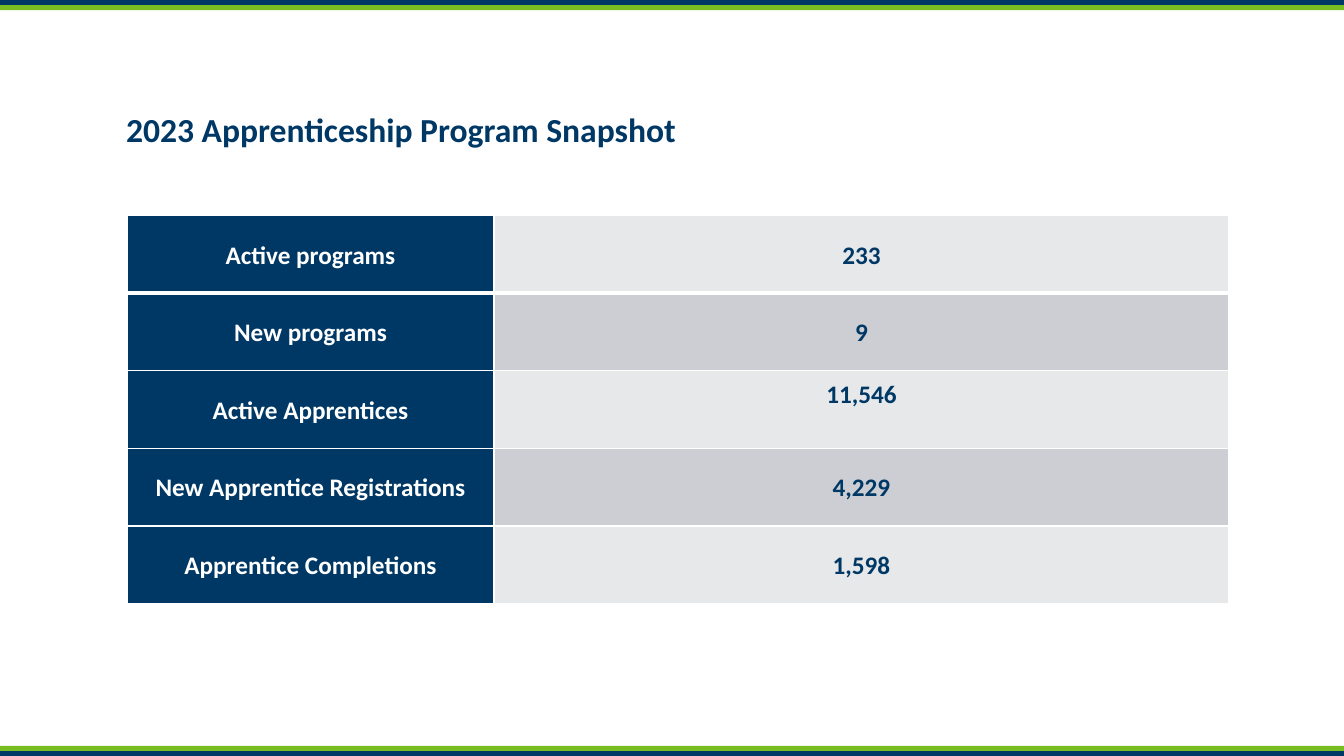
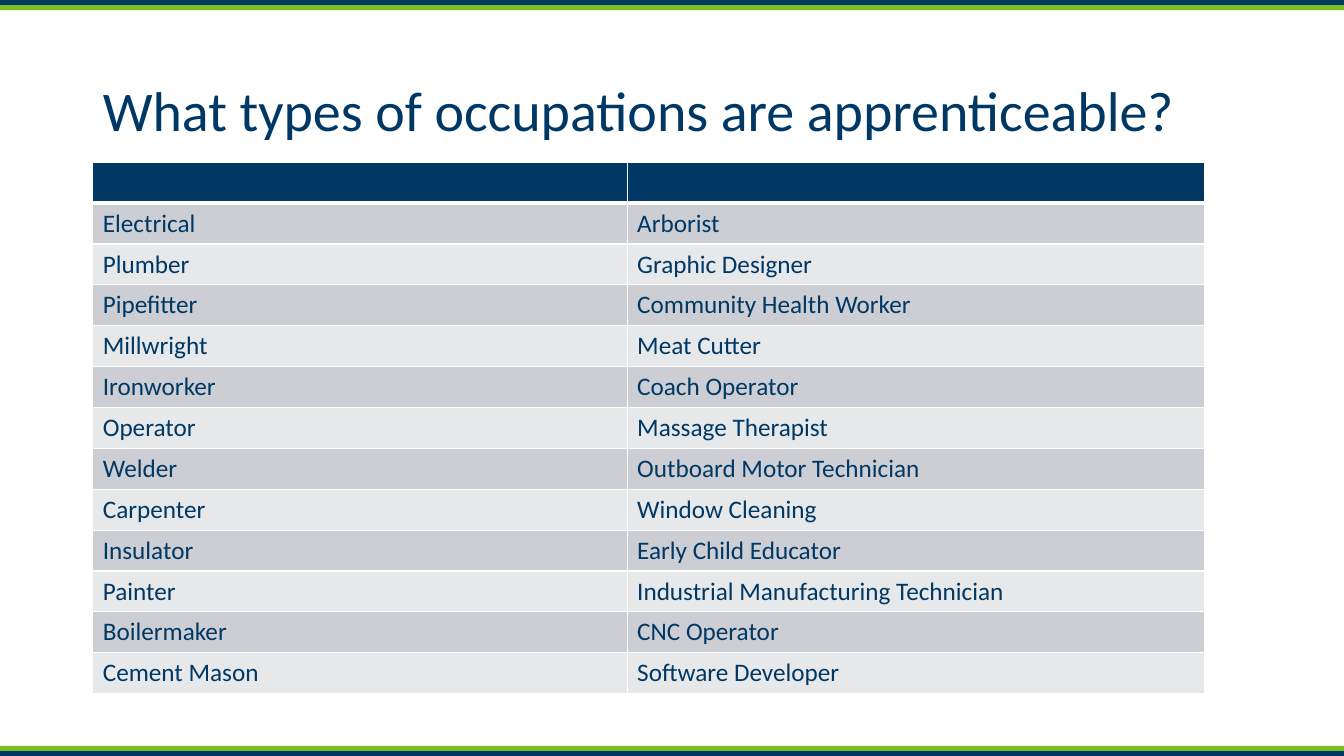
"""Build two apprenticeship slides: a program snapshot and a list of occupations."""
from lxml import etree
from pptx import Presentation
from pptx.dml.color import RGBColor
from pptx.enum.shapes import MSO_SHAPE
from pptx.enum.text import MSO_ANCHOR, MSO_AUTO_SIZE, PP_ALIGN
from pptx.oxml.ns import qn
from pptx.util import Inches, Pt

RECTANGLE = MSO_SHAPE.RECTANGLE
TOP, MIDDLE = MSO_ANCHOR.TOP, MSO_ANCHOR.MIDDLE
LEFT, CENTER = PP_ALIGN.LEFT, PP_ALIGN.CENTER
NO_AUTOFIT = MSO_AUTO_SIZE.NONE

NAVY = RGBColor(0x00, 0x38, 0x65)
GREEN = RGBColor(0x78, 0xBE, 0x21)
WHITE = RGBColor(0xFF, 0xFF, 0xFF)
LIGHT_GRAY = RGBColor(0xE7, 0xE8, 0xEA)
DARK_GRAY = RGBColor(0xCC, 0xCE, 0xD3)

FONT = "Calibri"
SLIDE_WIDTH, SLIDE_HEIGHT = 13.33, 7.5
BAND_HEIGHT = 0.05
TITLE_ONLY = 5

SNAPSHOT_TITLE = "2023 Apprenticeship Program Snapshot"
SNAPSHOT = [
    ("Active programs", "233"),
    ("New programs", "9"),
    ("Active Apprentices", "11,546"),
    ("New Apprentice Registrations", "4,229"),
    ("Apprentice Completions", "1,598"),
]
RAISED_VALUE = (2, 1)

OCCUPATIONS_TITLE = "What types of occupations are apprenticeable?"
OCCUPATIONS = [
    ("", ""),
    ("Electrical", "Arborist"),
    ("Plumber", "Graphic Designer"),
    ("Pipefitter", "Community Health Worker"),
    ("Millwright", "Meat Cutter"),
    ("Ironworker", "Coach Operator"),
    ("Operator", "Massage Therapist"),
    ("Welder", "Outboard Motor Technician"),
    ("Carpenter", "Window Cleaning"),
    ("Insulator", "Early Child Educator"),
    ("Painter", "Industrial Manufacturing Technician"),
    ("Boilermaker", "CNC Operator"),
    ("Cement Mason", "Software Developer"),
]


def write_text(text_frame, text, size=18, color=NAVY, bold=False, align=LEFT, spacing=1.0):
    """Write one formatted paragraph."""
    paragraph = text_frame.paragraphs[0]
    paragraph.alignment = align
    paragraph.line_spacing = spacing
    if text:
        run = paragraph.add_run()
        run.text = text
        run.font.name = FONT
        run.font.size = Pt(size)
        run.font.bold = bold
        run.font.color.rgb = color


def add_bands(slide):
    """Draw the navy and green stripes along the top and bottom edges."""
    for step, color in enumerate((NAVY, GREEN)):
        top = step * BAND_HEIGHT
        for band_top in (top, SLIDE_HEIGHT - BAND_HEIGHT - top):
            band = slide.shapes.add_shape(RECTANGLE, 0, Inches(band_top),
                                          Inches(SLIDE_WIDTH), Inches(BAND_HEIGHT))
            band.shadow.inherit = False
            band.fill.solid()
            band.fill.fore_color.rgb = color
            band.line.fill.background()


def add_titled_slide(presentation, title, box, anchor, **text_format):
    """Add a banded slide with its title placed in the given box."""
    slide = presentation.slides.add_slide(presentation.slide_layouts[TITLE_ONLY])
    add_bands(slide)
    shape = slide.shapes.title
    shape.left, shape.top, shape.width, shape.height = map(Inches, box)
    text_frame = shape.text_frame
    text_frame.word_wrap = True
    text_frame.auto_size = NO_AUTOFIT
    text_frame.vertical_anchor = anchor
    write_text(text_frame, title, **text_format)
    return slide


def set_borders(cell, **widths):
    """Give a cell white borders, with one width in points per side."""
    properties = cell._tc.get_or_add_tcPr()
    for side in "LRTB":
        line = etree.SubElement(properties, qn(f"a:ln{side}"), w=str(Pt(widths.get(side, 1))))
        fill = etree.SubElement(line, qn("a:solidFill"))
        etree.SubElement(fill, qn("a:srgbClr"), val=str(WHITE))


def add_grid(slide, rows, left, top, column_widths, row_height, is_heading, **text_format):
    """Add a table with navy heading cells and alternating gray rows."""
    frame = slide.shapes.add_table(len(rows), len(column_widths), Inches(left), Inches(top),
                                   Inches(sum(column_widths)), Inches(row_height * len(rows)))
    table = frame.table
    table.first_row = table.horz_banding = False
    for column, width in zip(table.columns, column_widths):
        column.width = Inches(width)
    for row_index, texts in enumerate(rows):
        table.rows[row_index].height = Inches(row_height)
        for column_index, text in enumerate(texts):
            cell = table.cell(row_index, column_index)
            heading = is_heading(row_index, column_index)
            set_borders(cell, T=3 if row_index == 1 else 1, B=3 if row_index == 0 else 1)
            cell.fill.solid()
            cell.fill.fore_color.rgb = NAVY if heading else (LIGHT_GRAY, DARK_GRAY)[row_index % 2]
            write_text(cell.text_frame, text, color=WHITE if heading else NAVY, **text_format)
    return table


def add_snapshot(presentation):
    """Add the slide with the program figures."""
    slide = add_titled_slide(presentation, SNAPSHOT_TITLE, (1.15, 1.03, 8.05, 0.85), TOP,
                             size=24, bold=True)
    table = add_grid(slide, SNAPSHOT, 1.26, 2.14, (3.64, 7.29), 0.77,
                     lambda row, column: column == 0, bold=True, align=CENTER, spacing=1.07)
    for cell in table.iter_cells():
        cell.vertical_anchor = MIDDLE
        cell.margin_left = cell.margin_right = Inches(0.07)
        cell.margin_top = cell.margin_bottom = 0
    table.cell(*RAISED_VALUE).margin_bottom = Inches(0.31)


def add_occupations(presentation):
    """Add the slide with the list of occupations."""
    slide = add_titled_slide(presentation, OCCUPATIONS_TITLE, (0.92, 0.4, 11.5, 1.45), MIDDLE,
                             size=40, spacing=0.9)
    add_grid(slide, OCCUPATIONS, 0.92, 1.61, (5.3, 5.73), 0.4, lambda row, column: row == 0)


def main():
    """Build and save the presentation."""
    presentation = Presentation()
    presentation.slide_width = Inches(SLIDE_WIDTH)
    presentation.slide_height = Inches(SLIDE_HEIGHT)
    add_snapshot(presentation)
    add_occupations(presentation)
    presentation.save("out.pptx")


if __name__ == "__main__":
    main()
